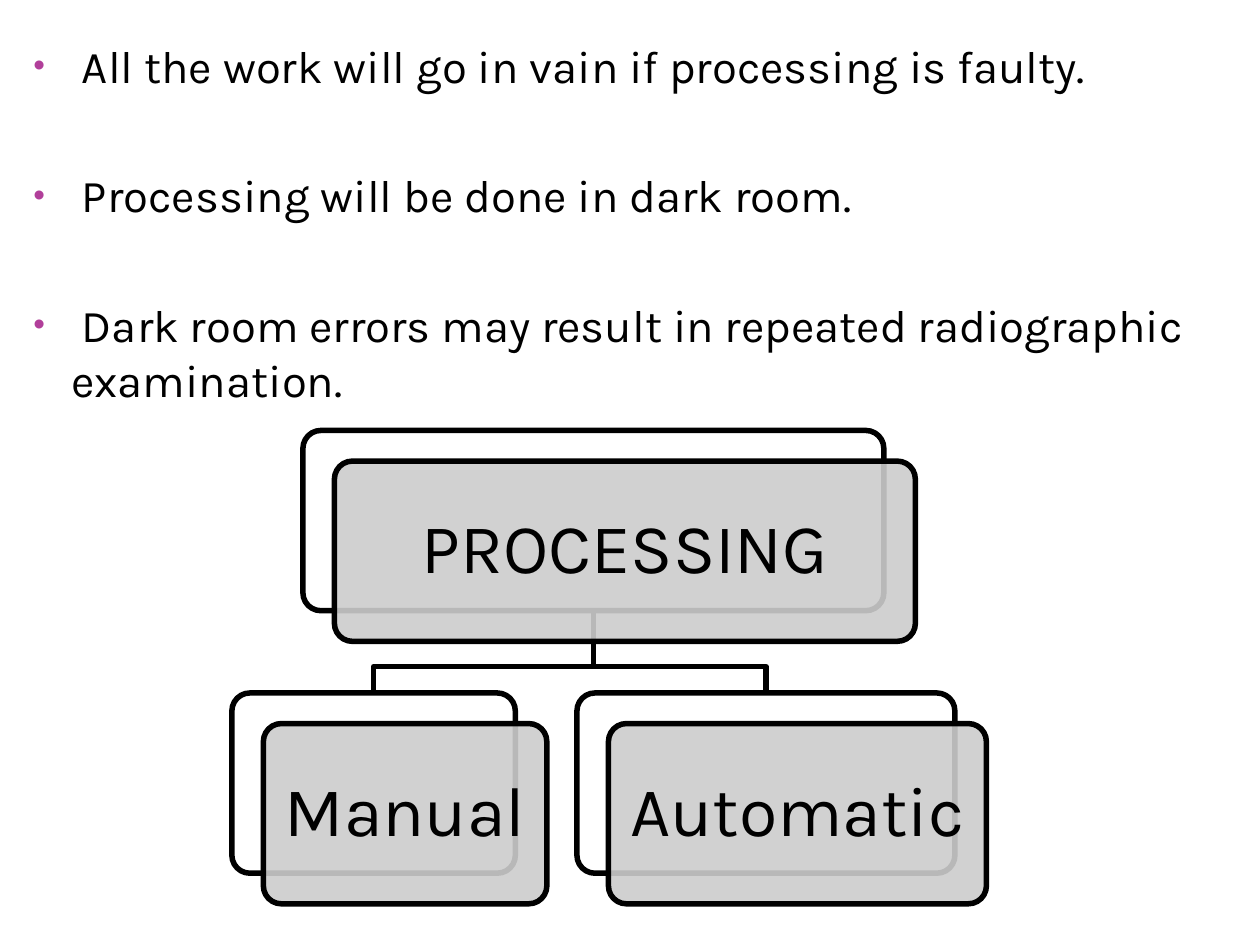
from dataclasses import dataclass

from lxml import etree
from pptx import Presentation
from pptx.dml.color import RGBColor
from pptx.enum import shapes, text
from pptx.oxml import ns
from pptx.util import Pt


@dataclass(frozen=True)
class Theme:
    font: str = "Karla"
    ink: str = "000000"
    paper: str = "FFFFFF"
    card: str = "CCCCCC"
    dot: str = "B13F9A"
    body: int = 26
    label: int = 40
    line: float = 3.15


THEME = Theme()
POINTS = (
    " All the work will go in vain if processing is faulty.",
    " Processing will be done in dark room.",
    " Dark room errors may result in repeated radiographic examination.",
)


def color(code):
    return RGBColor.from_string(code)


def add_tag(parent, name, **attrs):
    return etree.SubElement(parent, ns.qn(name), attrs)


def write(para, words, size, align=None, before=0, spacing=None):
    para.text = words
    para.alignment = align
    para.space_before = Pt(before)
    para.line_spacing = spacing
    font = para.font
    font.name, font.size = THEME.font, Pt(size)
    font.color.rgb = color(THEME.ink)


def add_dot(para, indent):
    props = para._p.get_or_add_pPr()
    props.set("marL", str(Pt(indent)))
    props.set("indent", str(-Pt(indent)))
    add_tag(add_tag(props, "a:buClr"), "a:srgbClr", val=THEME.dot)
    add_tag(props, "a:buSzPct", val="73000")
    add_tag(props, "a:buFont", typeface="Arial")
    add_tag(props, "a:buChar", char="•")


def add_points(slide, left, top, width, height):
    frame = slide.shapes.add_textbox(Pt(left), Pt(top), Pt(width), Pt(height)).text_frame
    frame.word_wrap = True
    for i, words in enumerate(POINTS):
        para = frame.paragraphs[0] if i == 0 else frame.add_paragraph()
        add_dot(para, 21.6)
        write(para, words, THEME.body, before=43 if i else 0)


def add_box(slide, left, top, width, height, fill):
    box = slide.shapes.add_shape(
        shapes.MSO_SHAPE.ROUNDED_RECTANGLE, Pt(left), Pt(top), Pt(width), Pt(height))
    box.adjustments[0] = 0.1
    box.shadow.inherit = False
    box.fill.solid()
    box.fill.fore_color.rgb = color(fill)
    box.line.color.rgb = color(THEME.ink)
    box.line.width = Pt(THEME.line)
    return box


def add_card(slide, left, top, width, height, words):
    """Place a white box with a labelled, slightly clear box shifted over it."""
    add_box(slide, left, top, width, height, THEME.paper)
    front = add_box(slide, left + 18, top + 17.5, width, height, THEME.card)
    tint = front.fill._xPr.find(ns.qn("a:solidFill"))[0]
    add_tag(tint, "a:alpha", val="90000")
    frame = front.text_frame
    frame.word_wrap = True
    frame.margin_left = frame.margin_right = Pt(6)
    frame.vertical_anchor = text.MSO_ANCHOR.MIDDLE
    write(frame.paragraphs[0], words, THEME.label,
          align=text.PP_ALIGN.CENTER, spacing=0.9)


def add_branch(slide, start, end, bend):
    (x, y), (to_x, to_y) = start, end
    path = slide.shapes.build_freeform(Pt(x), Pt(y))
    path.add_line_segments(
        [(Pt(x), Pt(bend)), (Pt(to_x), Pt(bend)), (Pt(to_x), Pt(to_y))], close=False)
    branch = path.convert_to_shape()
    branch.shadow.inherit = False
    branch.fill.background()
    branch.line.color.rgb = color(THEME.ink)
    branch.line.width = Pt(THEME.line)


def add_tree(slide, left, top, width, height):
    """Place one parent card centred over a row of child cards."""
    root, card, gap = 332, 103, 35.2
    kids = (("Manual", 162), ("Automatic", 216))
    mid = left + width / 2
    row = top + height - card - 17.5
    spots = []
    x = left
    for words, size in kids:
        spots.append((words, x, size))
        x += size + gap
    for _, x, size in spots:
        add_branch(slide, (mid, top + card), (x + size / 2, row), row - 15)
    add_card(slide, mid - root / 2, top, root, card, "PROCESSING")
    for words, x, size in spots:
        add_card(slide, x, row, size, card, words)


def main():
    deck = Presentation()
    deck.slide_width, deck.slide_height = Pt(720), Pt(540)
    slide = deck.slides.add_slide(deck.slide_layouts[6])
    slide.background.fill.solid()
    slide.background.fill.fore_color.rgb = color(THEME.paper)
    add_points(slide, 12, 18, 696, 498)
    add_tree(slide, 132.5, 246, 413.2, 270.5)
    deck.save("out.pptx")


if __name__ == "__main__":
    main()
